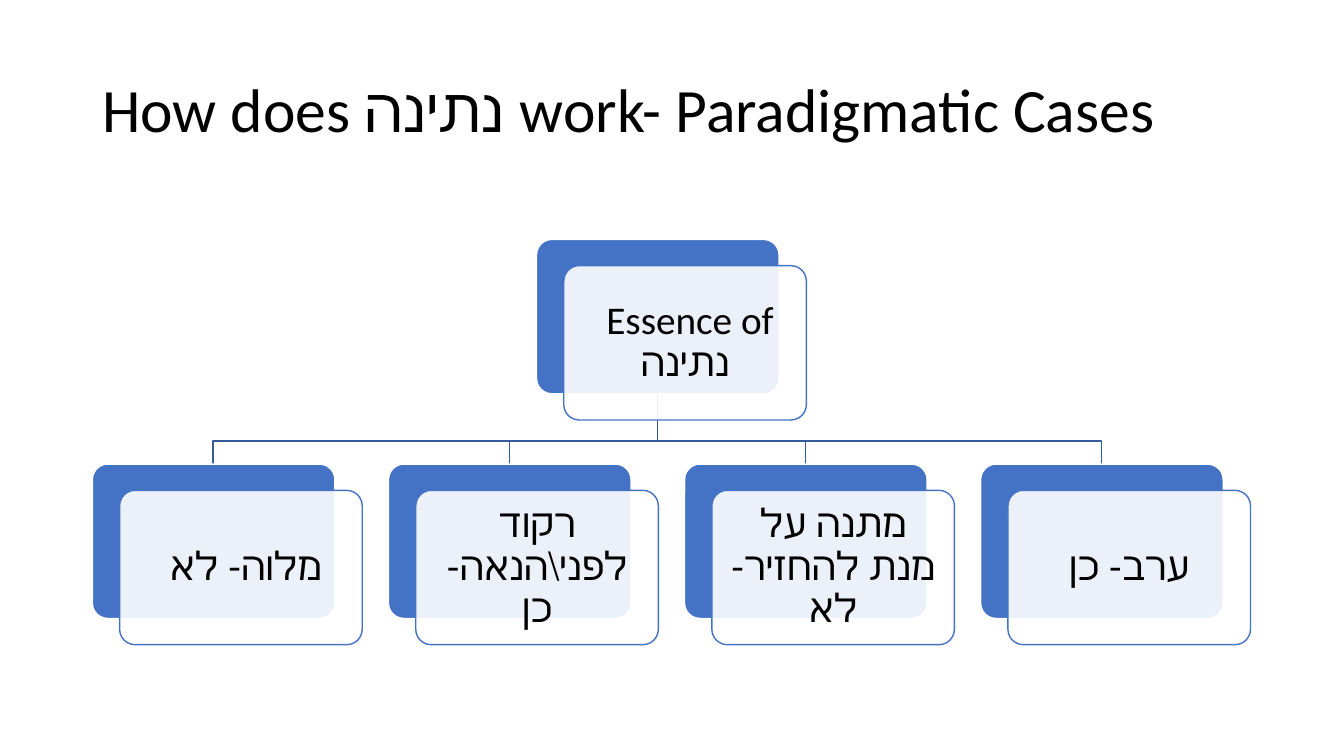
from lxml import etree
from pptx import Presentation, util as u
from pptx.dml import color
from pptx.enum import shapes, text
from pptx.oxml import ns

PX = u.Inches(1) // 96
CARD_WIDTH, CARD_HEIGHT = 231, 147
OFFSET_X, OFFSET_Y = 26, 25
LEFT, STEP = 88, 282
ROOT_LEFT, ROOT_TOP, CASE_TOP = LEFT + STEP * 3 // 2, 228, 442
BLUE, LINE_BLUE, WHITE, BLACK = "4472C4", "365B9D", "FFFFFF", "000000"


def rgb(value):
    return color.RGBColor.from_string(value)


def add_card(left, top, fill, line):
    card = slide.shapes.add_shape(
        shapes.MSO_SHAPE.ROUNDED_RECTANGLE,
        left * PX, top * PX, CARD_WIDTH * PX, CARD_HEIGHT * PX)
    card.adjustments[0] = 0.1
    card.shadow.inherit = False
    card.fill.solid()
    card.fill.fore_color.rgb = rgb(fill)
    card.line.color.rgb = rgb(line)
    card.line.width = u.Pt(1)
    return card


presentation = Presentation()
presentation.slide_width = 1280 * PX
presentation.slide_height = 720 * PX
slide = presentation.slides.add_slide(presentation.slide_layouts[6])

title = slide.shapes.add_textbox(LEFT * PX, 38 * PX, 1104 * PX, 139 * PX)
title.text_frame.word_wrap = True
title.text_frame.vertical_anchor = text.MSO_ANCHOR.MIDDLE
title.text_frame.text = "How does נתינה work- Paradigmatic Cases"
paragraph = title.text_frame.paragraphs[0]
paragraph.line_spacing = 0.9
paragraph.runs[0].font.size = u.Pt(44)
paragraph.runs[0].font.name = "Calibri"
paragraph.runs[0].font.color.rgb = rgb(BLACK)

cases = ["מלוה- לא ", "רקוד לפני\\הנאה- כן", "מתנה על מנת להחזיר- לא", "ערב- כן"]
nodes = [("Essence of \vנתינה", ROOT_LEFT, ROOT_TOP)]
nodes += [(case, LEFT + index * STEP, CASE_TOP) for index, case in enumerate(cases)]

root_center = ROOT_LEFT + CARD_WIDTH // 2
branch_top = ROOT_TOP + CARD_HEIGHT
for _, left, _ in nodes[:0:-1]:
    center = left + CARD_WIDTH // 2
    builder = slide.shapes.build_freeform(root_center, branch_top, scale=PX)
    builder.add_line_segments(
        [(root_center, 420), (center, 420), (center, CASE_TOP)], close=False)
    branch = builder.convert_to_shape()
    branch.shadow.inherit = False
    branch.fill.background()
    branch.line.color.rgb = rgb(LINE_BLUE)
    branch.line.width = u.Pt(1)

for wording, left, top in nodes:
    add_card(left, top, BLUE, WHITE)
    front = add_card(left + OFFSET_X, top + OFFSET_Y, WHITE, BLUE)
    fill_color = front.fill._xPr.find(ns.qn("a:solidFill"))[0]
    etree.SubElement(fill_color, ns.qn("a:alpha"), val="90000")

    frame = front.text_frame
    frame.word_wrap = True
    frame.vertical_anchor = text.MSO_ANCHOR.MIDDLE
    frame.margin_left = frame.margin_right = 11 * PX
    frame.margin_top = frame.margin_bottom = 11 * PX
    paragraph = frame.paragraphs[0]
    paragraph.text = wording
    paragraph.alignment = text.PP_ALIGN.CENTER
    paragraph.line_spacing = 0.9
    paragraph._p.get_or_add_pPr().set("rtl", "1")
    for run in paragraph.runs:
        run.font.size = u.Pt(28)
        run.font.name = "Calibri"
        run.font.color.rgb = rgb(BLACK)

presentation.save("out.pptx")
